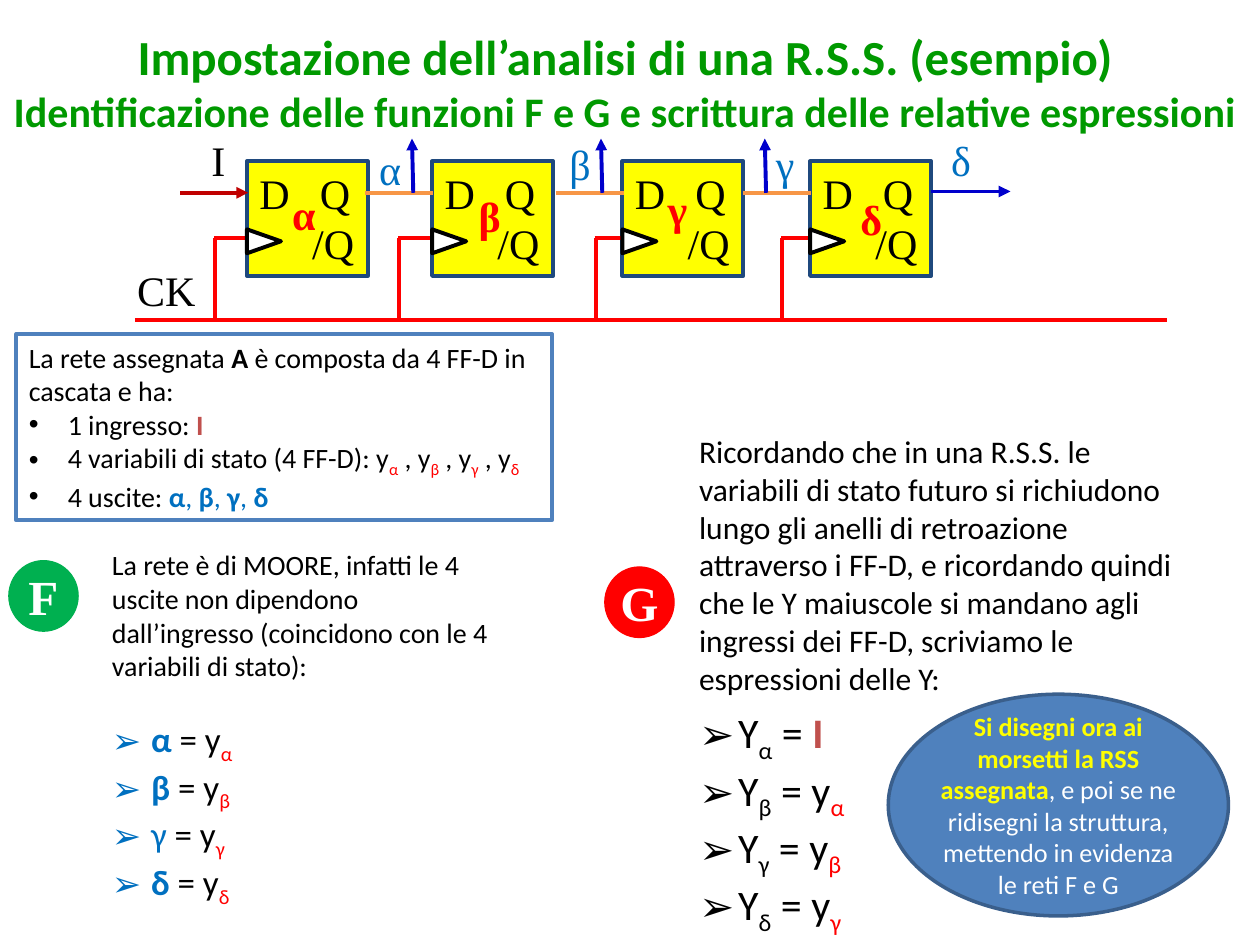
from lxml.etree import SubElement
from pptx import Presentation
from pptx.dml.color import RGBColor
from pptx.enum.shapes import MSO_CONNECTOR, MSO_SHAPE
from pptx.enum.text import MSO_ANCHOR, PP_ALIGN
from pptx.oxml.ns import qn
from pptx.util import Inches, Pt

SERIF, SANS = "Times New Roman", "Calibri"
BLACK, WHITE, RED, BLUE = "000000", "FFFFFF", "FF0000", "0070C0"
NAVY, ORANGE, BRICK, GREEN = "0000CC", "F79646", "C0504D", "009900"
color = RGBColor.from_string

presentation = Presentation()
presentation.slide_width, presentation.slide_height = Inches(10), Inches(7.5)
slide = presentation.slides.add_slide(presentation.slide_layouts[6])
shapes = slide.shapes


def add_line(x1, y1, x2, y2, line_color, arrow=False):
    line = shapes.add_connector(MSO_CONNECTOR.STRAIGHT, Inches(x1), Inches(y1), Inches(x2), Inches(y2))
    line.line.color.rgb = color(line_color)
    line.line.width = Pt(2.25)
    if arrow:
        SubElement(line.line._get_or_add_ln(), qn("a:tailEnd"), type="triangle")
    SubElement(line._element.spPr, qn("a:effectLst"))


def write(shape, paragraphs, font, size, text_color=BLACK, bold=False,
          align=PP_ALIGN.LEFT, wrap=True, bullet=None, plain=0):
    """Each paragraph is a list of runs: (text, colour, bold, subscript); the first `plain` get no bullet."""
    frame = shape.text_frame
    frame.word_wrap = wrap
    for index, runs in enumerate(paragraphs):
        paragraph = frame.paragraphs[0] if index == 0 else frame.add_paragraph()
        paragraph.alignment = align
        paragraph.font.name, paragraph.font.size = font, Pt(size)
        paragraph.font.bold = bold
        paragraph.font.color.rgb = color(text_color)
        for text, run_color, run_bold, subscript in runs:
            run = paragraph.add_run()
            run.text = text
            if run_color:
                run.font.color.rgb = color(run_color)
            if run_bold:
                run.font.bold = True
            if subscript:
                run._r.get_or_add_rPr().set("baseline", "-25000")
        if bullet and index >= plain:
            properties = paragraph._p.get_or_add_pPr()
            properties.set("marL", str(Inches(0.31)))
            properties.set("indent", str(-Inches(0.31)))
            default = properties.find(qn("a:defRPr"))
            for tag, attribute, value in (("a:buFont", "typeface", "Arial"), ("a:buChar", "char", bullet)):
                item = SubElement(properties, qn(tag))
                item.set(attribute, value)
                default.addprevious(item)


# Title
title = shapes.add_textbox(Inches(0.04), Inches(0.21), Inches(9.84), Inches(0.88))
frame = title.text_frame
frame.margin_left = frame.margin_right = frame.margin_top = frame.margin_bottom = 0
write(title, [[("Impostazione dell’analisi di una R.S.S. (esempio)", None, False, False)],
              [("Identificazione delle funzioni F e G e scrittura delle relative espressioni", None, False, False)]],
      SANS, 28, GREEN, True, PP_ALIGN.CENTER)
frame.paragraphs[1].font.size = Pt(24)

# Cascade of four D flip-flops: left edge, clock tap
for index, (left, tap) in enumerate([(1.96, 1.71), (3.43, 3.17), (4.94, 4.73), (6.43, 6.21)]):
    box = shapes.add_shape(MSO_SHAPE.RECTANGLE, Inches(left), Inches(1.28), Inches(0.96), Inches(0.91))
    box.shadow.inherit = False
    box.fill.solid()
    box.fill.fore_color.rgb = color("FFFF00")
    box.line.color.rgb = color("1F497D")
    box.line.width = Pt(2.25)
    box.text_frame.vertical_anchor = MSO_ANCHOR.TOP
    box.text_frame.margin_right = 0
    write(box, [[("D\tQ", None, False, False)], [("/Q", None, False, False)]], SERIF, 24)
    pins, inverted = box.text_frame.paragraphs
    tabs = SubElement(pins._p.pPr, qn("a:tabLst"))
    SubElement(tabs, qn("a:tab"), pos=str(Inches(0.48)), algn="l")
    pins._p.pPr.find(qn("a:defRPr")).addprevious(tabs)
    inverted._p.pPr.set("marL", str(Inches(0.42)))

    # Data input, clock input and clock mark
    first = index == 0
    add_line(left - 0.53, 1.53, left + 0.01, 1.53, "C00000" if first else ORANGE, first)
    add_line(tap - 0.01, 1.89, left + 0.03, 1.89, RED)
    add_line(tap, 1.89, tap, 2.54, RED)
    clock = shapes.add_shape(MSO_SHAPE.ISOSCELES_TRIANGLE, Inches(left + 0.04), Inches(1.78),
                             Inches(0.19), Inches(0.27))
    clock.rotation = 90
    clock.shadow.inherit = False
    clock.fill.solid()
    clock.fill.fore_color.rgb = color(WHITE)
    clock.line.color.rgb = color(BLACK)
    clock.line.width = Pt(2.25)

# Clock line and output arrows
add_line(1.07, 2.54, 9.26, 2.54, RED)
add_line(7.39, 1.52, 8.02, 1.52, NAVY, True)
for x in (3.28, 4.78, 6.08):
    add_line(x, 1.53, x - 0.01, 1.1, NAVY, True)

# Signal names, then flip-flop names
for text, left, top, width, text_color, bold in [
    ("I", 1.58, 1.02, 0.31, BLACK, False), ("CK", 0.99, 2.05, 0.67, BLACK, False),
    ("α", 2.91, 1.09, 0.38, BLUE, False), ("β", 4.42, 1.05, 0.37, BLUE, False),
    ("γ", 6.06, 1.05, 0.35, BLUE, False), ("δ", 7.45, 1.02, 0.36, BLUE, False),
    ("α", 2.22, 1.45, 0.39, RED, True), ("β", 3.7, 1.46, 0.38, RED, True),
    ("γ", 5.2, 1.41, 0.36, RED, True), ("δ", 6.73, 1.49, 0.38, RED, True),
]:
    label = shapes.add_textbox(Inches(left), Inches(top), Inches(width), Inches(0.5))
    write(label, [[(text, None, False, False)]], SERIF, 24, text_color, bold, wrap=False)

# Description of the network
states, outputs = [("4 variabili di stato (4 FF-D): y", None, False, False)], [("4 uscite: ", None, False, False)]
for index, letter in enumerate("αβγδ"):
    if index:
        states.append((" , y", None, False, False))
        outputs.append((", ", BLUE, False, False))
    states.append((letter, RED, False, True))
    outputs.append((letter, BLUE, True, False))
summary = shapes.add_shape(MSO_SHAPE.RECTANGLE, Inches(0.13), Inches(2.65), Inches(4.25), Inches(1.48))
summary.shadow.inherit = False
summary.fill.background()
summary.line.color.rgb = color("4F81BD")
summary.line.width = Pt(2.25)
summary.text_frame.vertical_anchor = MSO_ANCHOR.TOP
write(summary, [
    [("La rete assegnata ", None, False, False), ("A", None, True, False),
     (" è composta da 4 FF-D in cascata e ha:", None, False, False)],
    [("1 ingresso: ", None, False, False), ("I", BRICK, True, False)],
    states, outputs], SANS, 16, bullet="•", plain=1)

# Round markers F and G
for letter, left, top, fill in [("G", 4.8, 4.5, RED), ("F", 0.07, 4.45, "00B050")]:
    marker = shapes.add_shape(MSO_SHAPE.OVAL, Inches(left), Inches(top), Inches(0.55), Inches(0.56))
    marker.shadow.inherit = False
    marker.fill.solid()
    marker.fill.fore_color.rgb = color(fill)
    marker.line.color.rgb = color(fill)
    marker.line.width = Pt(0.75)
    marker.text_frame.vertical_anchor = MSO_ANCHOR.MIDDLE
    write(marker, [[(letter, None, False, False)]], SERIF, 28, WHITE, True, PP_ALIGN.CENTER, wrap=False)

# Function F: outputs
output_text = shapes.add_textbox(Inches(0.79), Inches(4.3), Inches(3.25), Inches(2.79))
write(output_text, [[("La rete è di MOORE, infatti le 4 uscite non dipendono dall’ingresso "
                      "(coincidono con le 4 variabili di stato):", None, False, False)]]
      + [[(letter, BLUE, letter != "γ", False), (" = y", None, False, False), (letter, RED, False, True)]
         for letter in "αβγδ"], SANS, 20, bullet="➢", plain=1)
output_text.text_frame.paragraphs[0].font.size = Pt(16)
output_text.text_frame.paragraphs[1].space_before = Pt(20)

# Function G: next states
next_states = shapes.add_textbox(Inches(5.45), Inches(5.56), Inches(1.55), Inches(1.72))
write(next_states, [[("Y", None, False, False), (letter, None, False, True), (" = ", None, False, False)]
                    + ([("y", None, False, False), (source, RED, False, True)] if source
                       else [("I", BRICK, True, False)])
                    for letter, source in zip("αβγδ", [None, "α", "β", "γ"])],
      SANS, 24, wrap=False, bullet="➢")
reminder = shapes.add_textbox(Inches(5.45), Inches(3.38), Inches(4.16), Inches(2.22))
write(reminder, [[("Ricordando che in una R.S.S. le variabili di stato futuro si richiudono lungo gli anelli "
                   "di retroazione attraverso i FF-D, e ricordando quindi che le Y maiuscole si mandano agli "
                   "ingressi dei FF-D, scriviamo le espressioni delle Y:", None, False, False)]], SANS, 18)

# Exercise bubble
bubble = shapes.add_shape(MSO_SHAPE.OVAL, Inches(7.05), Inches(5.51), Inches(2.7), Inches(1.76))
bubble.shadow.inherit = False
bubble.fill.solid()
bubble.fill.fore_color.rgb = color("4F81BD")
bubble.line.color.rgb = color("3A5F8C")
bubble.line.width = Pt(2)
frame = bubble.text_frame
frame.margin_left = frame.margin_right = frame.margin_top = frame.margin_bottom = 0
frame.vertical_anchor = MSO_ANCHOR.MIDDLE
write(bubble, [[("Si disegni ora ai morsetti la RSS assegnata", "FFFF00", True, False),
                (", e poi se ne ridisegni la struttura, mettendo in evidenza le reti F e G", None, False, False)]],
      SANS, 15, WHITE, align=PP_ALIGN.CENTER)

presentation.save("out.pptx")
